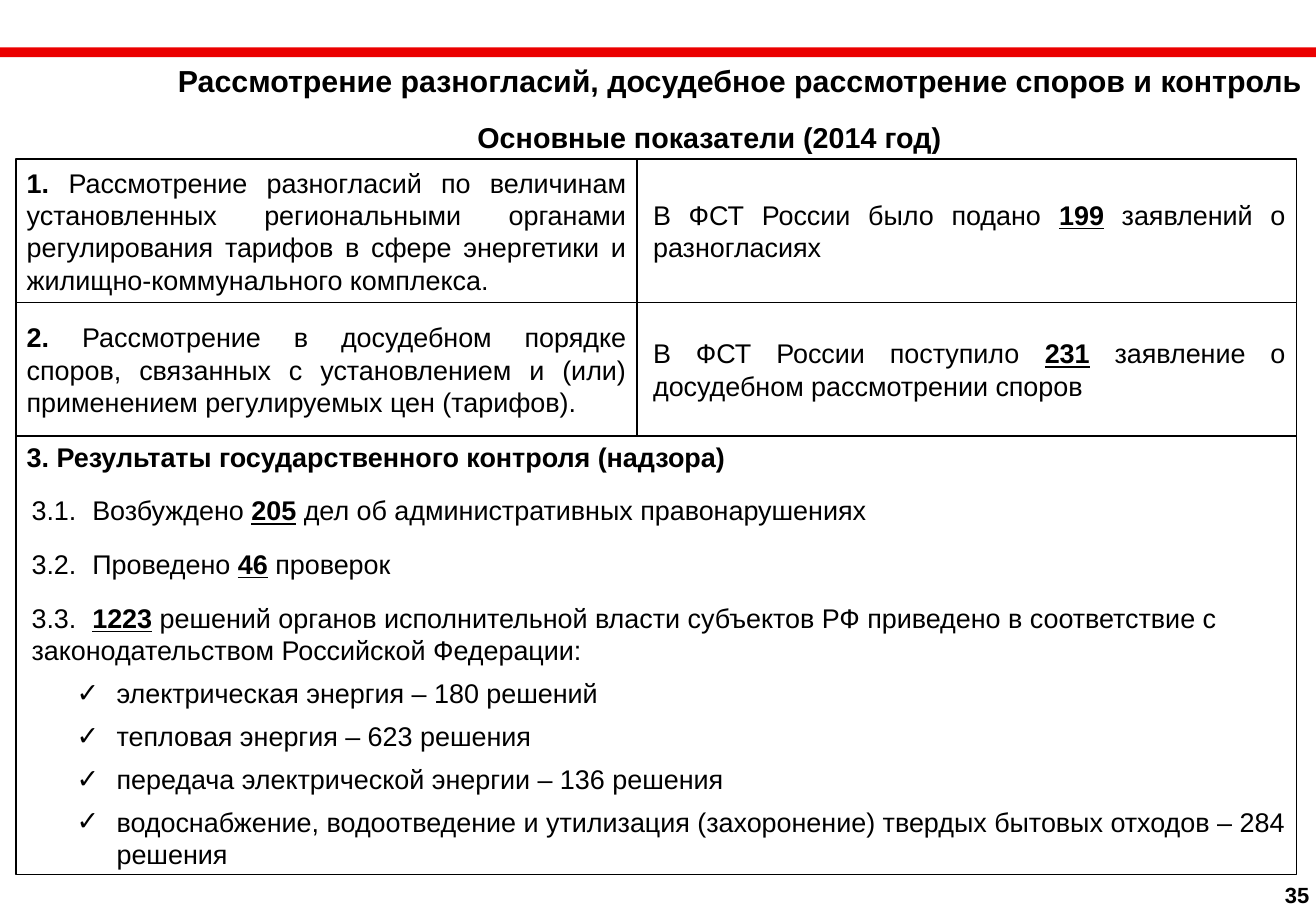
from lxml import etree
from pptx import Presentation
from pptx import util as u
from pptx.dml.color import RGBColor
from pptx.enum import shapes, text
from pptx.oxml.ns import qn

PX = 9144  # 100 px to the inch
COLORS = {"red": "EB0000", "black": "000000"}
ALIGN = text.PP_ALIGN


def set_frame(shape, anchor, left=9, top=4):
    """Set wrapping, anchor and insets; return the text frame."""
    frame = shape.text_frame
    frame.word_wrap = True
    frame.auto_size = text.MSO_AUTO_SIZE.NONE
    frame.vertical_anchor = anchor
    frame.margin_left = frame.margin_right = left * PX
    frame.margin_top = frame.margin_bottom = top * PX
    return frame


def write(paragraph, runs, size=16, align=ALIGN.JUSTIFY, margin=0, indent=0,
          before=0, after=0, bullet=None, tab=None):
    """Fill a paragraph with (text, style) runs; style holds b and/or u."""
    properties = paragraph._p.get_or_add_pPr()
    properties.set("marL", str(margin * PX))
    properties.set("indent", str(indent * PX))
    if bullet:
        etree.SubElement(properties, qn("a:buFont"), typeface="Arial")
        etree.SubElement(properties, qn("a:buChar"), char=bullet)
    else:
        etree.SubElement(properties, qn("a:buNone"))
    if tab:
        tabs = etree.SubElement(properties, qn("a:tabLst"))
        etree.SubElement(tabs, qn("a:tab"), pos=str(tab * PX), algn="l")
    paragraph.alignment = align
    paragraph.space_before = u.Pt(before)
    paragraph.space_after = u.Pt(after)
    paragraph.font.name = "Arial"
    paragraph.font.size = u.Pt(size)
    paragraph.font.color.rgb = RGBColor.from_string(COLORS["black"])
    for words, style in runs:
        run = paragraph.add_run()
        run.text = words
        run.font.bold = "b" in style
        run.font.underline = "u" in style


presentation = Presentation()
presentation.slide_width = 1084 * PX
presentation.slide_height = 750 * PX
slide = presentation.slides.add_slide(presentation.slide_layouts[1])
title, body = slide.placeholders

# Red band
band = slide.shapes.add_shape(shapes.MSO_SHAPE.RECTANGLE, 0, 39 * PX, 1084 * PX, 8 * PX)
band.shadow.inherit = False
band.fill.solid()
band.fill.fore_color.rgb = RGBColor.from_string(COLORS["red"])
band.line.fill.background()

# Title and subtitle
subtitle = slide.shapes.add_textbox(108 * PX, 92 * PX, 953 * PX, 39 * PX)
title.left, title.top, title.width, title.height = 133 * PX, 44 * PX, 953 * PX, 52 * PX
headings = [
    (title, "Рассмотрение разногласий, досудебное рассмотрение споров и контроль", 18),
    (subtitle, "Основные показатели (2014 год)", 17),
]
for heading, words, size in headings:
    paragraph = set_frame(heading, text.MSO_ANCHOR.TOP).paragraphs[0]
    write(paragraph, [(words, "b")], size, ALIGN.CENTER, margin=5, indent=-5)
    paragraph.line_spacing = 1.1

# Two rows: subject on the left, figure on the right
LEFT, MIDDLE, RIGHT = 13, 525, 1068
rows = [
    (131, 118,
     [("1. ", "b"), ("Рассмотрение разногласий по величинам установленных региональными органами "
                     "регулирования тарифов в сфере энергетики и жилищно-коммунального комплекса.", "")],
     [("В ФСТ России было подано ", ""), ("199", "bu"), (" заявлений о разногласиях", "")]),
    (249, 110,
     [("2. ", "b"), ("Рассмотрение в досудебном порядке споров, связанных с установлением и (или) "
                     "применением регулируемых цен (тарифов).", "")],
     [("В ФСТ России поступило ", ""), ("231", "bu"), (" заявление о досудебном рассмотрении споров", "")]),
]
figure_format = {"margin": 4, "before": 7.6, "after": 10.7}
for top, height, subject, figure in rows:
    for left, right, runs, layout in ((LEFT, MIDDLE, subject, {}),
                                      (MIDDLE, RIGHT, figure, figure_format)):
        cell = slide.shapes.add_shape(shapes.MSO_SHAPE.RECTANGLE, left * PX, top * PX,
                                      (right - left) * PX, height * PX)
        cell.shadow.inherit = False
        cell.fill.background()
        cell.line.color.rgb = RGBColor.from_string(COLORS["black"])
        cell.line.width = u.Pt(1)
        write(set_frame(cell, text.MSO_ANCHOR.MIDDLE).paragraphs[0], runs, **layout)

# Results of state control
body.left, body.top = LEFT * PX, 359 * PX
body.width, body.height = (RIGHT - LEFT) * PX, 361 * PX
body.line.color.rgb = RGBColor.from_string(COLORS["black"])
body.line.width = u.Pt(1)
numbered = {"margin": 4, "after": 12.6, "tab": 69}
checked = {"margin": 74, "indent": -33, "after": 6.3, "bullet": "✓"}
results = [
    ([("3. Результаты государственного контроля (надзора)", "b")], {"after": 12.6}),
    ([("3.1.\tВозбуждено ", ""), ("205", "bu"), (" дел об административных правонарушениях", "")], numbered),
    ([("3.2.\tПроведено ", ""), ("46", "bu"), (" проверок", "")], numbered),
    ([("3.3.\t", ""), ("1223", "bu"),
      (" решений органов исполнительной власти субъектов РФ приведено в соответствие с "
       "законодательством Российской Федерации:", "")],
     {**numbered, "after": 6.3, "align": ALIGN.LEFT}),
    ([("электрическая энергия – 180 решений", "")], checked),
    ([("тепловая энергия – 623 решения", "")], checked),
    ([("передача электрической энергии – 136 решения", "")], checked),
    ([("водоснабжение, водоотведение и утилизация (захоронение) твердых бытовых отходов – 284 решения", "")],
     {**checked, "after": 0}),
]
frame = set_frame(body, text.MSO_ANCHOR.MIDDLE)
for index, (runs, layout) in enumerate(results):
    paragraph = frame.add_paragraph() if index else frame.paragraphs[0]
    write(paragraph, runs, **layout)

# Page number
number = slide.shapes.add_textbox(1048 * PX, 721 * PX, 41 * PX, 32 * PX)
frame = set_frame(number, text.MSO_ANCHOR.TOP, 10, 5)
frame.word_wrap = False
write(frame.paragraphs[0], [("35", "b")], 13, ALIGN.CENTER)

presentation.save("out.pptx")
